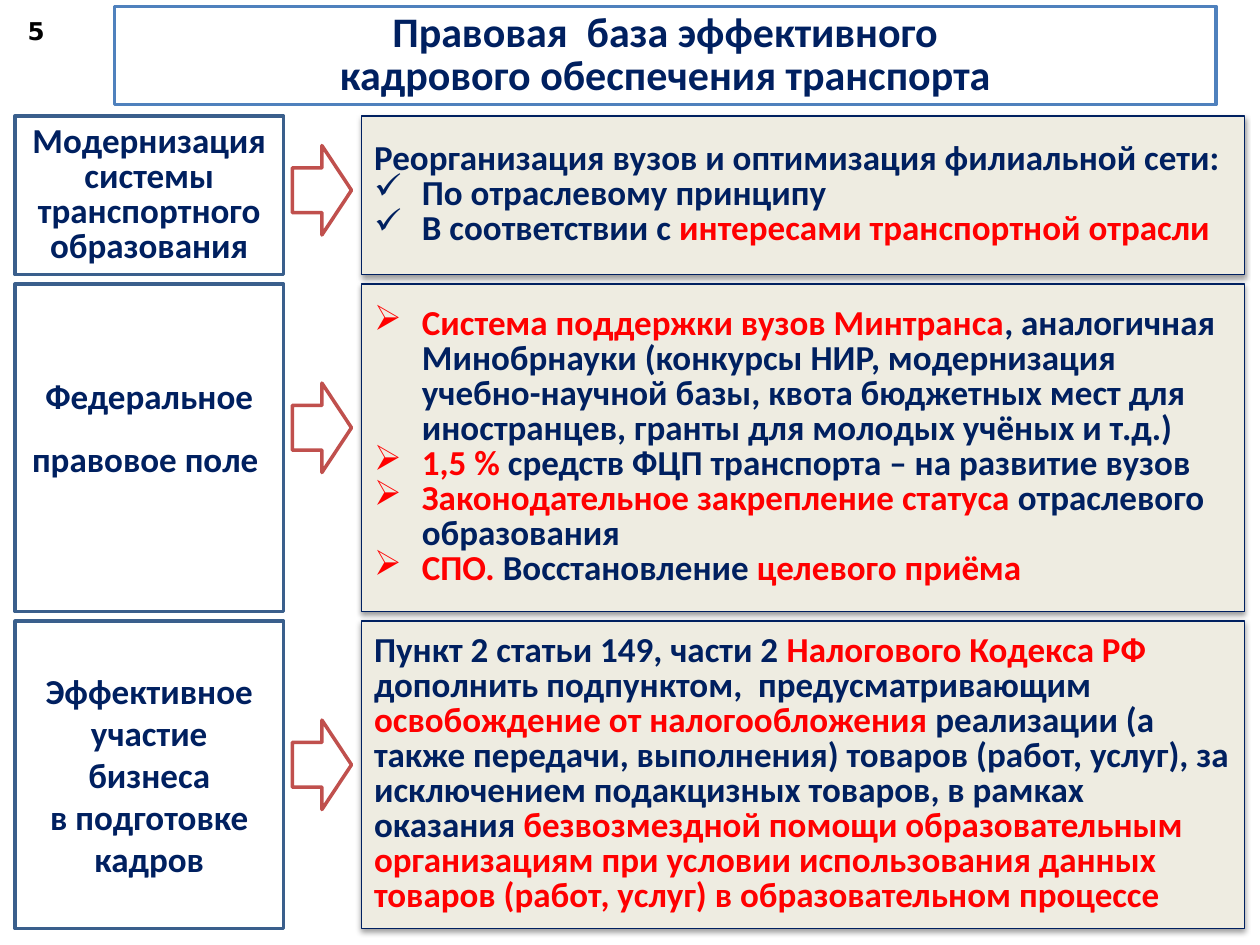
from dataclasses import dataclass, field
from itertools import accumulate
from typing import Optional

from lxml import etree
from pptx import Presentation
from pptx import util as u
from pptx.dml.color import RGBColor
from pptx.enum import shapes, text
from pptx.oxml import ns


@dataclass(frozen=True)
class Theme:
    font: str = "Calibri"
    number_font: str = "DejaVu Sans"
    title_size: float = 24
    body_size: float = 20
    number_size: float = 14
    navy: str = "002060"
    red: str = "FF0000"
    black: str = "000000"
    white: str = "FFFFFF"
    cream: str = "EEECE1"
    title_line: str = "4F81BD"
    label_line: str = "3A5F8C"
    arrow_line: str = "C0504D"


@dataclass(frozen=True)
class Box:
    left: float
    top: float
    width: float
    height: float

    def emu(self) -> tuple:
        return tuple(u.Inches(n) for n in (self.left, self.top, self.width, self.height))


@dataclass(frozen=True)
class Style:
    size: float
    font: str = Theme.font
    color: str = Theme.navy
    spacing: object = None
    align: text.PP_ALIGN = text.PP_ALIGN.CENTER
    bullet: Optional[str] = None


@dataclass(frozen=True)
class Row:
    height: float
    arrow_lift: float
    label: list
    label_spacing: object
    lines: list
    bullet: Optional[str] = None
    label_bottom: float = 0.05
    plain_lines: list = field(default_factory=list)


THEME = Theme()
TIGHT = u.Pt(20)
GRID_TOP, ROW_GAP = 0.92, 0.075
LABEL_LEFT, LABEL_WIDTH = 0.12, 2.13
PANEL_LEFT, PANEL_WIDTH = 2.87, 7.01
ARROW_LEFT, ARROW_WIDTH, ARROW_HEIGHT = 2.32, 0.47, 0.71

TITLE = "Правовая  база эффективного\nкадрового обеспечения транспорта"
ROWS = [
    Row(1.26, 0.04, ["Модернизация системы транспортного образования"], TIGHT,
        ["По отраслевому принципу",
         "В соответствии с *интересами транспортной отрасли*"], "✓",
        plain_lines=["Реорганизация вузов и оптимизация филиальной сети:"]),
    Row(2.6, 0.16, ["Федеральное", "правовое поле "], 1.5,
        ["*Система поддержки вузов Минтранса*, аналогичная Минобрнауки "
         "(конкурсы НИР, модернизация учебно-научной базы, квота бюджетных мест "
         "для иностранцев, гранты для молодых учёных и т.д.)",
         "*1,5 % *средств ФЦП транспорта – на развитие вузов",
         "*Законодательное закрепление статуса* отраслевого образования",
         "*СПО.* Восстановление *целевого приёма*"], "➢", label_bottom=0.55),
    Row(2.44, 0.08, ["Эффективное", "участие", "бизнеса", "в подготовке", "кадров"], None,
        ["Пункт 2 статьи 149, части 2 *Налогового Кодекса РФ *дополнить подпунктом,  "
         "предусматривающим *освобождение от налогообложения *реализации (а также "
         "передачи, выполнения) товаров (работ, услуг), за исключением подакцизных "
         "товаров, в рамках оказания *безвозмездной помощи образовательным "
         "организациям при условии использования данных товаров (работ, услуг) "
         "в образовательном процессе*"]),
]


def paint(shape, fill: str, line: str, width: float) -> None:
    shape.fill.solid()
    shape.fill.fore_color.rgb = RGBColor.from_string(fill)
    shape.line.color.rgb = RGBColor.from_string(line)
    shape.line.width = u.Pt(width)


def add_painted(slide, kind, box: Box, fill: str, line: str, width: float):
    shape = slide.shapes.add_shape(kind, *box.emu())
    shape.shadow.inherit = False
    paint(shape, fill, line, width)
    return shape


def add_shadow(shape) -> None:
    effects = shape._element.spPr.find(ns.qn("a:effectLst"))
    shadow = etree.SubElement(effects, ns.qn("a:outerShdw"), blurRad=str(u.Pt(3.1)),
                              dist=str(u.Pt(1.6)), dir="5400000", rotWithShape="0")
    color = etree.SubElement(shadow, ns.qn("a:srgbClr"), val=THEME.black)
    etree.SubElement(color, ns.qn("a:alpha"), val="38000")


def format_paragraph(paragraph, style: Style) -> None:
    paragraph.alignment = style.align
    if style.spacing is not None:
        paragraph.line_spacing = style.spacing
    if style.bullet:
        properties = paragraph._p.get_or_add_pPr()
        properties.set("marL", str(u.Inches(0.38)))
        properties.set("indent", str(-u.Inches(0.38)))
        etree.SubElement(properties, ns.qn("a:buChar"), char=style.bullet)


def format_run(run, style: Style, color: str) -> None:
    run.font.name = style.font
    run.font.size = u.Pt(style.size)
    run.font.bold = True
    run.font.color.rgb = RGBColor.from_string(color)


def write(shape, lines: list) -> None:
    frame = shape.text_frame
    frame.word_wrap = True
    frame.auto_size = text.MSO_AUTO_SIZE.NONE
    frame.vertical_anchor = text.MSO_ANCHOR.MIDDLE
    for index, (line, style) in enumerate(lines):
        paragraph = frame.add_paragraph() if index else frame.paragraphs[0]
        format_paragraph(paragraph, style)
        for position, part in enumerate(line.split("*")):
            if part:
                run = paragraph.add_run()
                run.text = part
                format_run(run, style, THEME.red if position % 2 else style.color)


def draw_title(slide) -> None:
    title = slide.shapes.title
    title.left, title.top, title.width, title.height = Box(0.91, 0.05, 8.74, 0.78).emu()
    paint(title, THEME.white, THEME.title_line, 2)
    frame = title.text_frame
    frame.margin_left = frame.margin_right = u.Inches(0.06)
    frame.margin_top = frame.margin_bottom = u.Inches(0.03)
    style = Style(THEME.title_size, spacing=u.Pt(24.8))
    write(title, [(line, style) for line in TITLE.split("\n")])


def draw_number(slide) -> None:
    number = slide.shapes.add_textbox(*Box(0.12, 0.04, 0.31, 0.4).emu())
    write(number, [("5", Style(THEME.number_size, THEME.number_font, THEME.black))])


def draw_row(slide, row: Row, top: float) -> None:
    rectangle = shapes.MSO_SHAPE.RECTANGLE
    label = add_painted(slide, rectangle, Box(LABEL_LEFT, top, LABEL_WIDTH, row.height),
                        THEME.white, THEME.label_line, 2)
    label.text_frame.margin_bottom = u.Inches(row.label_bottom)
    label_style = Style(THEME.body_size, spacing=row.label_spacing)
    write(label, [(line, label_style) for line in row.label])

    panel = add_painted(slide, rectangle, Box(PANEL_LEFT, top, PANEL_WIDTH, row.height),
                        THEME.cream, THEME.navy, 0.75)
    add_shadow(panel)
    plain = Style(THEME.body_size, spacing=TIGHT, align=text.PP_ALIGN.LEFT)
    listed = Style(THEME.body_size, spacing=TIGHT, align=text.PP_ALIGN.LEFT, bullet=row.bullet)
    write(panel, [(line, plain) for line in row.plain_lines]
          + [(line, listed) for line in row.lines])

    arrow_top = top + (row.height - ARROW_HEIGHT) / 2 - row.arrow_lift
    add_painted(slide, shapes.MSO_SHAPE.RIGHT_ARROW,
                Box(ARROW_LEFT, arrow_top, ARROW_WIDTH, ARROW_HEIGHT),
                THEME.white, THEME.arrow_line, 2)


def main() -> None:
    presentation = Presentation()
    presentation.slide_width, presentation.slide_height = u.Inches(10), u.Inches(7.5)
    slide = presentation.slides.add_slide(presentation.slide_layouts.get_by_name("Title Only"))
    draw_title(slide)
    draw_number(slide)
    tops = accumulate((row.height + ROW_GAP for row in ROWS), initial=GRID_TOP)
    for row, top in zip(ROWS, tops):
        draw_row(slide, row, top)
    presentation.save("out.pptx")


if __name__ == "__main__":
    main()
